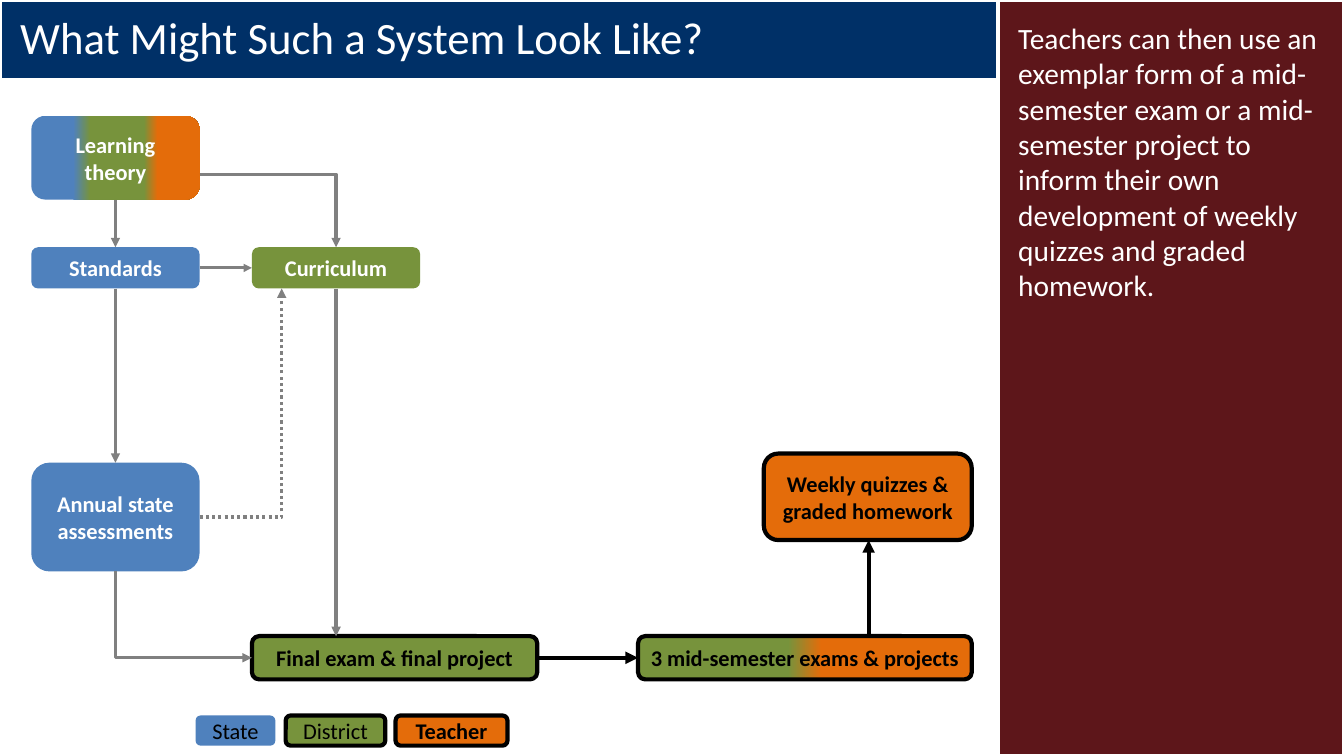
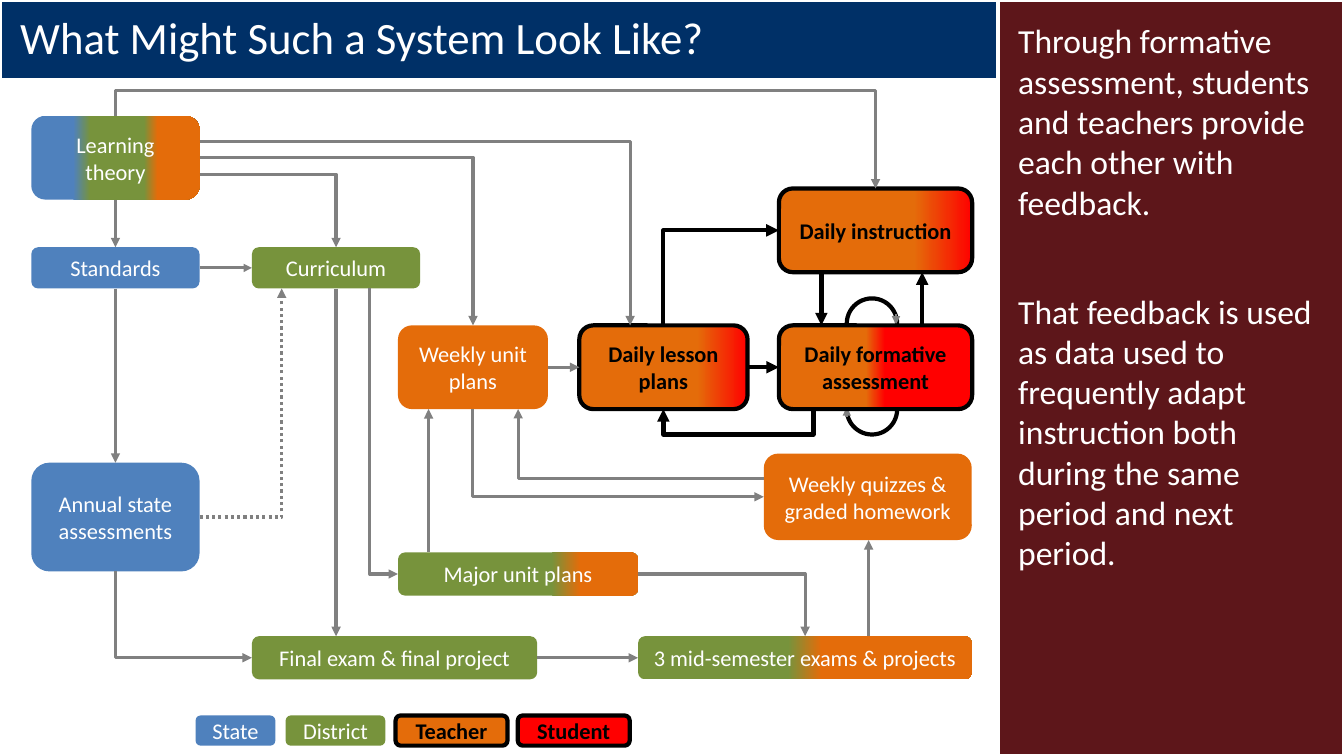
from dataclasses import dataclass
from typing import NamedTuple

from lxml.etree import SubElement
from pptx import Presentation
from pptx.dml.color import RGBColor
from pptx.enum.dml import MSO_LINE
from pptx.enum.shapes import MSO_CONNECTOR, MSO_SHAPE as PRESET
from pptx.enum.text import MSO_ANCHOR as ANCHOR, PP_ALIGN as ALIGN
from pptx.oxml.ns import qn
from pptx.util import Cm, Pt

COLORS = {
    "white": "FFFFFF", "black": "000000", "grey": "808080",
    "title": "003067", "sidebar": "5D161A",
    "state": "4F81BD", "district": "77933C", "teacher": "E46C0A", "student": "FF0000",
}
FONT = "Calibri"
TITLE = "What Might Such a System Look Like?"
SLIDE_WIDTH, SLIDE_HEIGHT = 33.87, 19.05
SIDEBAR_LEFT = 25.15
LEGEND_LEFT, LEGEND_TOP, LEGEND_HEIGHT, LEGEND_GAP = 4.93, 18.03, 0.76, 0.26

Point = tuple[float, float]
Blend = tuple[tuple[int, str], ...]


class Look(NamedTuple):
    color: str
    bold: bool = False
    outlined: bool = False


class Pen(NamedTuple):
    color: str
    width: float
    dotted: bool = False


class Route(NamedTuple):
    """An arrow through the given points, pointing at the last one."""
    points: tuple[Point, ...]
    pen: Pen


@dataclass(frozen=True)
class Box:
    text: str
    left: float
    top: float
    width: float
    height: float
    fill: str | Blend
    inset: float = 0.25

    @property
    def right(self) -> float:
        return self.left + self.width

    @property
    def bottom(self) -> float:
        return self.top + self.height

    @property
    def mid_x(self) -> float:
        return self.left + self.width / 2

    @property
    def mid_y(self) -> float:
        return self.top + self.height / 2


PLAIN = Look("white")
BOLD = Look("white", bold=True)
NEW = Look("black", bold=True, outlined=True)

GREY = Pen("grey", 2.25)
THIN = Pen("grey", 2)
DOTTED = Pen("grey", 2.25, dotted=True)
BLACK = Pen("black", 3)

ALL_LEVELS = ((0, "state"), (25, "state"), (35, "district"),
              (67, "district"), (75, "teacher"), (100, "teacher"))
DISTRICT_TEACHER = ((0, "district"), (45, "district"), (55, "teacher"), (100, "teacher"))
MOSTLY_DISTRICT = ((0, "district"), (64, "district"), (76, "teacher"), (100, "teacher"))
MOSTLY_TEACHER = ((0, "teacher"), (70, "teacher"), (100, "student"))
TEACHER_STUDENT = ((0, "teacher"), (45, "teacher"), (55, "student"), (100, "student"))

theory = Box("Learning theory", 0.79, 2.92, 4.24, 2.11, ALL_LEVELS)
standards = Box("Standards", 0.79, 6.23, 4.24, 1.04, "state")
curriculum = Box("Curriculum", 6.35, 6.23, 4.24, 1.04, "district")
annual = Box("Annual state assessments", 0.79, 11.66, 4.24, 2.74, "state")
final = Box("Final exam & final project", 6.35, 16.03, 7.19, 1.09, "district")
midterms = Box("3 mid-semester exams & projects", 16.08, 16.03, 8.41, 1.09,
               DISTRICT_TEACHER, inset=0)
quizzes = Box("Weekly quizzes & graded homework", 19.25, 11.43, 5.24, 2.18, "teacher")
major = Box("Major unit plans", 10.03, 13.92, 6.05, 1.09, MOSTLY_DISTRICT)
weekly = Box("Weekly unit plans", 10.03, 8.2, 3.78, 2.11, "teacher")
lesson = Box("Daily lesson plans", 14.6, 8.2, 4.24, 2.11, MOSTLY_TEACHER)
instruction = Box("Daily instruction", 19.63, 4.75, 4.87, 2.11, MOSTLY_TEACHER)
formative = Box("Daily formative assessment", 19.63, 8.2, 4.87, 2.11, TEACHER_STUDENT)

LEGEND = (("State", "state", 2.01), ("District", "district", 2.51),
          ("Teacher", "teacher", 2.82), ("Student", "student", 2.82))


def across(start: Box, end: Box, pen: Pen) -> Route:
    return Route(((start.right, start.mid_y), (end.left, start.mid_y)), pen)


def upright(x: float, start: float, end: float, pen: Pen) -> Route:
    return Route(((x, start), (x, end)), pen)


def base_routes(exam_pen: Pen) -> list[Route]:
    """The arrows both slides have; exam_pen draws those between the exams."""
    return [
        upright(theory.mid_x, theory.bottom, standards.top, GREY),
        upright(standards.mid_x, standards.bottom, annual.top, GREY),
        upright(curriculum.mid_x, curriculum.bottom, final.top, GREY),
        across(standards, curriculum, THIN),
        Route(((theory.right, 4.39), (curriculum.mid_x, 4.39),
               (curriculum.mid_x, curriculum.top)), GREY),
        Route(((annual.mid_x, annual.bottom), (annual.mid_x, final.mid_y),
               (final.left, final.mid_y)), GREY),
        Route(((annual.right, annual.mid_y), (7.1, annual.mid_y),
               (7.1, curriculum.bottom)), DOTTED),
        across(final, midterms, exam_pen),
        upright(21.89, midterms.top, quizzes.bottom, exam_pen),
    ]


DAILY_ROUTES = [
    Route(((theory.right, 3.97), (weekly.mid_x, 3.97), (weekly.mid_x, weekly.top)), GREY),
    Route(((theory.right, 3.56), (15.88, 3.56), (15.88, lesson.top)), GREY),
    Route(((theory.mid_x, theory.top), (theory.mid_x, 2.29),
           (instruction.mid_x, 2.29), (instruction.mid_x, instruction.top)), GREY),
    Route(((9.32, curriculum.bottom), (9.32, major.mid_y), (major.left, major.mid_y)), GREY),
    upright(10.8, major.top, weekly.bottom, GREY),
    Route(((major.right, major.mid_y), (20.29, major.mid_y), (20.29, midterms.top)), GREY),
    Route(((quizzes.left, 12.07), (13.06, 12.07), (13.06, weekly.bottom)), GREY),
    Route(((weekly.mid_x, weekly.bottom), (weekly.mid_x, 12.52), (quizzes.left, 12.52)), GREY),
    across(weekly, lesson, GREY),
    across(lesson, formative, BLACK),
    Route(((lesson.mid_x, lesson.top), (lesson.mid_x, instruction.mid_y),
           (instruction.left, instruction.mid_y)), BLACK),
    upright(20.7, instruction.bottom, formative.top, BLACK),
    upright(23.24, formative.top, instruction.bottom, BLACK),
    Route(((20.5, formative.bottom), (20.5, 10.95), (lesson.mid_x, 10.95),
           (lesson.mid_x, lesson.bottom)), BLACK),
]


def rgb(name: str) -> RGBColor:
    return RGBColor.from_string(COLORS[name])


def paint(shape, fill: str | Blend | None, line: str | None = None, width: float = 3) -> None:
    """Set fill (one colour, a blend or none) and outline, without a shadow."""
    shape.shadow.inherit = False
    if fill is None:
        shape.fill.background()
    elif isinstance(fill, str):
        shape.fill.solid()
        shape.fill.fore_color.rgb = rgb(fill)
    else:
        shape.fill.gradient()
        shape.fill.gradient_angle = 0
        stops = shape._element.spPr.find(qn("a:gradFill")).find(qn("a:gsLst"))
        for stop in list(stops):
            stops.remove(stop)
        for percent, name in fill:
            stop = SubElement(stops, qn("a:gs"), pos=str(percent * 1000))
            SubElement(stop, qn("a:srgbClr"), val=COLORS[name])
    if line is None:
        shape.line.fill.background()
    else:
        shape.line.color.rgb = rgb(line)
        shape.line.width = Pt(width)


def set_frame(frame, anchor: ANCHOR, inset_x: float, inset_top: float = 0.13) -> None:
    frame.word_wrap = True
    frame.vertical_anchor = anchor
    frame.margin_left = frame.margin_right = Cm(inset_x)
    frame.margin_top, frame.margin_bottom = Cm(inset_top), Cm(0.13)


def write(paragraph, text: str, size: float, align: ALIGN, look: Look = PLAIN) -> None:
    paragraph.alignment = align
    run = paragraph.add_run()
    run.text = text
    run.font.name, run.font.size, run.font.bold = FONT, Pt(size), look.bold
    run.font.color.rgb = rgb(look.color)


def draw_box(slide, box: Box, look: Look) -> None:
    shape = slide.shapes.add_shape(PRESET.ROUNDED_RECTANGLE, Cm(box.left), Cm(box.top),
                                   Cm(box.width), Cm(box.height))
    paint(shape, box.fill, "black" if look.outlined else None)
    set_frame(shape.text_frame, ANCHOR.MIDDLE, box.inset)
    write(shape.text_frame.paragraphs[0], box.text, 16, ALIGN.CENTER, look)


def draw_route(slide, route: Route) -> None:
    points = [(Cm(x), Cm(y)) for x, y in route.points]
    arrow_end = "a:tailEnd"
    if len(points) > 3:
        outline = slide.shapes.build_freeform(*points[0], scale=1.0)
        outline.add_line_segments(points[1:], close=False)
        arrow = outline.convert_to_shape()
        paint(arrow, None, route.pen.color, route.pen.width)
    else:
        bent = len(points) == 3
        # A one-bend connector leaves sideways, so upright starts run backwards.
        if bent and points[0][0] == points[1][0]:
            points.reverse()
            arrow_end = "a:headEnd"
        kind = MSO_CONNECTOR.ELBOW if bent else MSO_CONNECTOR.STRAIGHT
        arrow = slide.shapes.add_connector(kind, *points[0], *points[-1])
        if bent:
            arrow._element.spPr.find(qn("a:prstGeom")).set("prst", "bentConnector2")
        arrow.line.color.rgb = rgb(route.pen.color)
        arrow.line.width = Pt(route.pen.width)
        SubElement(arrow._element.spPr, qn("a:effectLst"))
    if route.pen.dotted:
        arrow.line.dash_style = MSO_LINE.ROUND_DOT
    SubElement(arrow._element.spPr.find(qn("a:ln")), qn(arrow_end), type="triangle")


def draw_legend(slide, looks: tuple[Look, ...]) -> None:
    left = LEGEND_LEFT
    for (label, fill, width), look in zip(LEGEND, looks):
        draw_box(slide, Box(label, left, LEGEND_TOP, width, LEGEND_HEIGHT, fill), look)
        left += width + LEGEND_GAP


def draw_feedback_loops(slide) -> None:
    for top in (7.52, 9.68):
        loop = slide.shapes.add_shape(PRESET.OVAL, Cm(21.34), Cm(top), Cm(1.27), Cm(1.27))
        paint(loop, None, "black")
    for arrow in (upright(22.58, 7.92, 8.18, THIN), upright(21.34, 10.52, 10.26, THIN)):
        draw_route(slide, arrow)


def add_framed_slide(deck, messages: tuple[str, ...], size: float):
    """Add a slide with the title band and the sidebar text."""
    slide = deck.slides.add_slide(deck.slide_layouts[5])
    title = slide.shapes.title
    title.left, title.top, title.width, title.height = Cm(0), Cm(0), Cm(SLIDE_WIDTH), Cm(2.03)
    paint(title, "title", "white")
    set_frame(title.text_frame, ANCHOR.MIDDLE, 0.51)
    heading = title.text_frame.paragraphs[0]
    heading.line_spacing = 0.9
    write(heading, TITLE, 32, ALIGN.LEFT)

    sidebar = slide.shapes.add_shape(PRESET.RECTANGLE, Cm(SIDEBAR_LEFT), Cm(0),
                                     Cm(SLIDE_WIDTH - SIDEBAR_LEFT), Cm(SLIDE_HEIGHT))
    paint(sidebar, "sidebar", "white")
    frame = sidebar.text_frame
    set_frame(frame, ANCHOR.TOP, 0.51, 0.51)
    for number, message in enumerate(messages):
        paragraph = frame.add_paragraph() if number else frame.paragraphs[0]
        if number:
            paragraph.space_before = Pt(49)
        write(paragraph, message, size, ALIGN.LEFT)
    return slide


def draw_system(slide, boxes: dict[Look, tuple[Box, ...]], routes: list[Route]) -> None:
    for look, members in boxes.items():
        for box in members:
            draw_box(slide, box, look)
    for route in routes:
        draw_route(slide, route)


def main() -> None:
    deck = Presentation()
    deck.slide_width, deck.slide_height = Cm(SLIDE_WIDTH), Cm(SLIDE_HEIGHT)
    sources = (theory, standards, curriculum, annual)
    exams = (final, midterms, quizzes)

    exam_slide = add_framed_slide(deck, (
        "Teachers can then use an exemplar form of a mid-semester exam or a mid-semester "
        "project to inform their own development of weekly quizzes and graded homework.",), 21)
    draw_legend(exam_slide, (Look("black"), Look("black", outlined=True), NEW))
    draw_system(exam_slide, {BOLD: sources, NEW: exams}, base_routes(BLACK))

    feedback_slide = add_framed_slide(deck, (
        "Through formative assessment, students and teachers provide each other with feedback.",
        "That feedback is used as data used to frequently adapt instruction both during "
        "the same period and next period."), 24)
    draw_legend(feedback_slide, (PLAIN, PLAIN, NEW, NEW))
    draw_feedback_loops(feedback_slide)
    draw_system(feedback_slide,
                {PLAIN: (*sources, *exams, major, weekly), NEW: (lesson, instruction, formative)},
                base_routes(GREY) + DAILY_ROUTES)
    deck.save("out.pptx")


if __name__ == "__main__":
    main()
